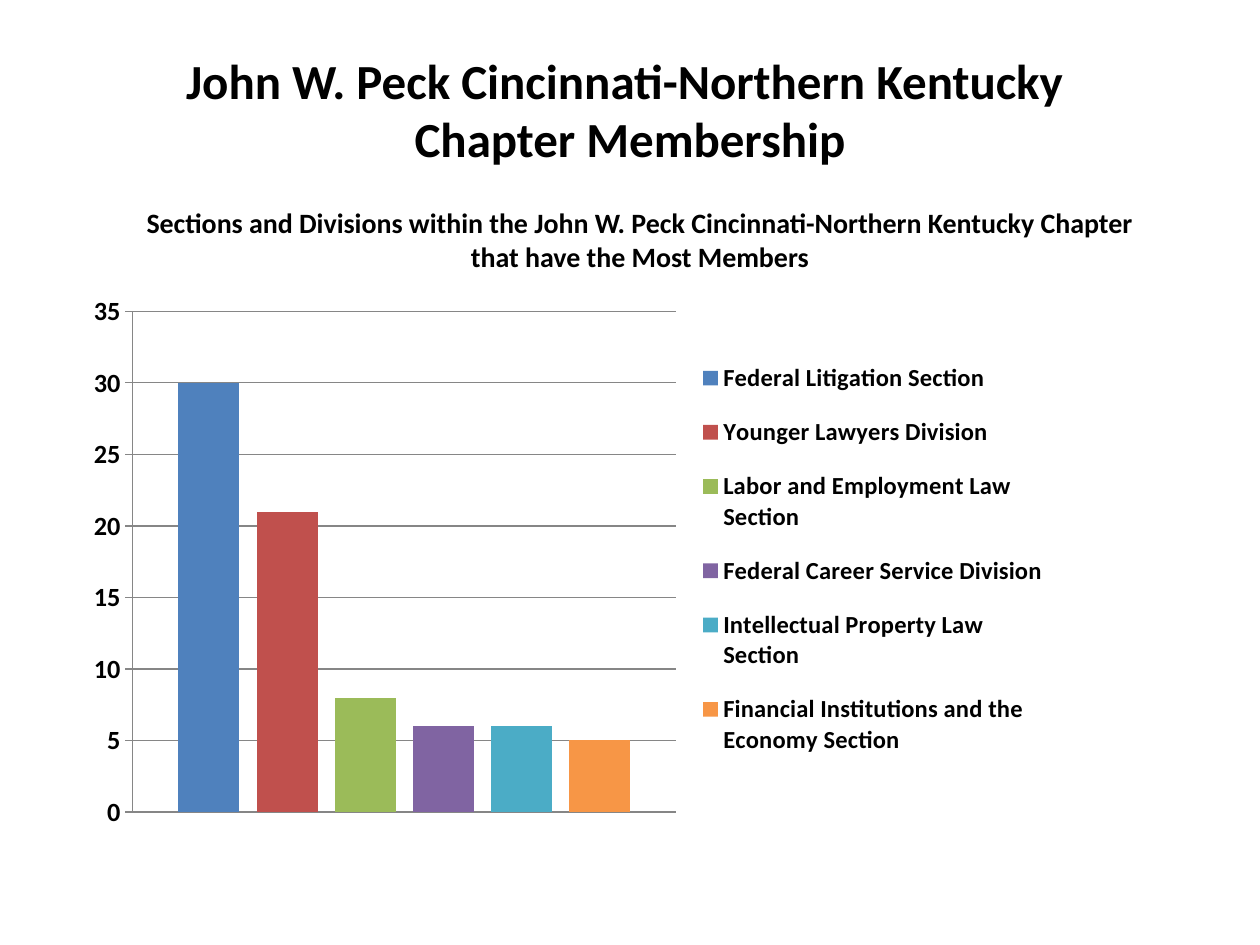
from lxml import etree
from pptx import Presentation
from pptx.chart.data import CategoryChartData
from pptx.dml.color import RGBColor
from pptx.enum.chart import XL_CHART_TYPE, XL_LEGEND_POSITION, XL_TICK_MARK
from pptx.enum.text import MSO_ANCHOR, MSO_AUTO_SIZE, PP_ALIGN
from pptx.oxml.ns import qn
from pptx.util import Pt

COLUMNS = XL_CHART_TYPE.COLUMN_CLUSTERED
RIGHT = XL_LEGEND_POSITION.RIGHT
OUTSIDE = XL_TICK_MARK.OUTSIDE
TOP = MSO_ANCHOR.TOP
NO_FIT = MSO_AUTO_SIZE.NONE
CENTER = PP_ALIGN.CENTER

FONT = "Calibri"
COLORS = {
    "text": "000000",
    "line": "868686",
    "Federal Litigation Section": "4F81BD",
    "Younger Lawyers Division": "C0504D",
    "Labor and Employment Law Section": "9BBB59",
    "Federal Career Service Division": "8064A2",
    "Intellectual Property Law Section": "4BACC6",
    "Financial Institutions and the Economy Section": "F79646",
}
MEMBERS = {
    "Federal Litigation Section": 30,
    "Younger Lawyers Division": 21,
    "Labor and Employment Law Section": 8,
    "Federal Career Service Division": 6,
    "Intellectual Property Law Section": 6,
    "Financial Institutions and the Economy Section": 5,
}


def rgb(name):
    """Return the named colour."""
    return RGBColor.from_string(COLORS[name])


def set_font(font, size, bold=True):
    """Apply the slide's typeface and text colour."""
    font.name = FONT
    font.size = Pt(size)
    font.bold = bold
    font.color.rgb = rgb("text")


def write_centered(sp, lines, size):
    """Fill a shape with one centred paragraph of broken lines."""
    tf = sp.text_frame
    tf.word_wrap = True
    tf.auto_size = NO_FIT
    tf.vertical_anchor = TOP
    p = tf.paragraphs[0]
    p.alignment = CENTER
    for i, line in enumerate(lines):
        if i:
            p.add_line_break()
        r = p.add_run()
        r.text = line
        set_font(r.font, size)


def add_title(s, lines):
    """Place and fill the title placeholder."""
    sp = s.shapes.title
    sp.left, sp.top, sp.width, sp.height = Pt(42), Pt(25), Pt(636), Pt(75)
    write_centered(sp, lines, 28)


def add_subtitle(s, text):
    """Add the chart heading."""
    sp = s.shapes.add_textbox(Pt(72), Pt(114), Pt(587.5), Pt(46))
    write_centered(sp, [text], 16)


def set_layout(parent, after, x, y, w, h, inner=False):
    """Fix a chart part's place as fractions of the chart."""
    for old in parent.findall(qn("c:layout")):
        parent.remove(old)
    layout = etree.Element(qn("c:layout"))
    manual = etree.SubElement(layout, qn("c:manualLayout"))
    values = {"xMode": "edge", "yMode": "edge", "x": x, "y": y, "w": w, "h": h}
    if inner:
        values = {"layoutTarget": "inner", **values}
    for tag, value in values.items():
        etree.SubElement(manual, qn(f"c:{tag}")).set("val", str(value))
    if after is None:
        parent.insert(0, layout)
    else:
        after.addnext(layout)


def style_axes(chart):
    """Hide the category axis and format the value axis."""
    chart.category_axis.visible = False
    axis = chart.value_axis
    axis.minimum_scale, axis.maximum_scale, axis.major_unit = 0, 35, 5
    axis.major_tick_mark = OUTSIDE
    axis.has_major_gridlines = True
    for line in (axis.format.line, axis.major_gridlines.format.line):
        line.color.rgb = rgb("line")
        line.width = Pt(0.75)
    set_font(axis.tick_labels.font, 15)


def add_member_chart(s):
    """Add the membership column chart with its legend."""
    data = CategoryChartData()
    data.categories = ["1"]
    for name, count in MEMBERS.items():
        data.add_series(name, [count])
    chart = s.shapes.add_chart(
        COLUMNS, Pt(42), Pt(162), Pt(564), Pt(318), data).chart
    set_font(chart.font, 10, bold=False)
    chart.has_title = False
    plot = chart.plots[0]
    plot.vary_by_categories = False
    plot.gap_width, plot.overlap = 150, -28
    for series in plot.series:
        series.format.fill.solid()
        series.format.fill.fore_color.rgb = rgb(series.name)
    style_axes(chart)
    chart.has_legend = True
    legend = chart.legend
    legend.position = RIGHT
    legend.include_in_layout = False
    set_font(legend.font, 14)
    area = chart.element.find(f".//{qn('c:plotArea')}")
    set_layout(area, None, 0.06, 0.05, 0.55, 0.9, inner=True)
    box = chart.element.find(f".//{qn('c:legend')}")
    set_layout(box, box.find(qn("c:legendPos")), 0.63, 0.1, 0.36, 0.79)


def main():
    """Build and save the slide."""
    prs = Presentation()
    prs.slide_width, prs.slide_height = Pt(720), Pt(540)
    s = prs.slides.add_slide(prs.slide_layouts[5])
    add_subtitle(s, "Sections and Divisions within the John W. Peck "
                    "Cincinnati-Northern Kentucky Chapter that have the "
                    "Most Members")
    add_title(s, ["John W. Peck Cincinnati-Northern Kentucky ",
                  "Chapter Membership"])
    add_member_chart(s)
    prs.save("out.pptx")


if __name__ == "__main__":
    main()
